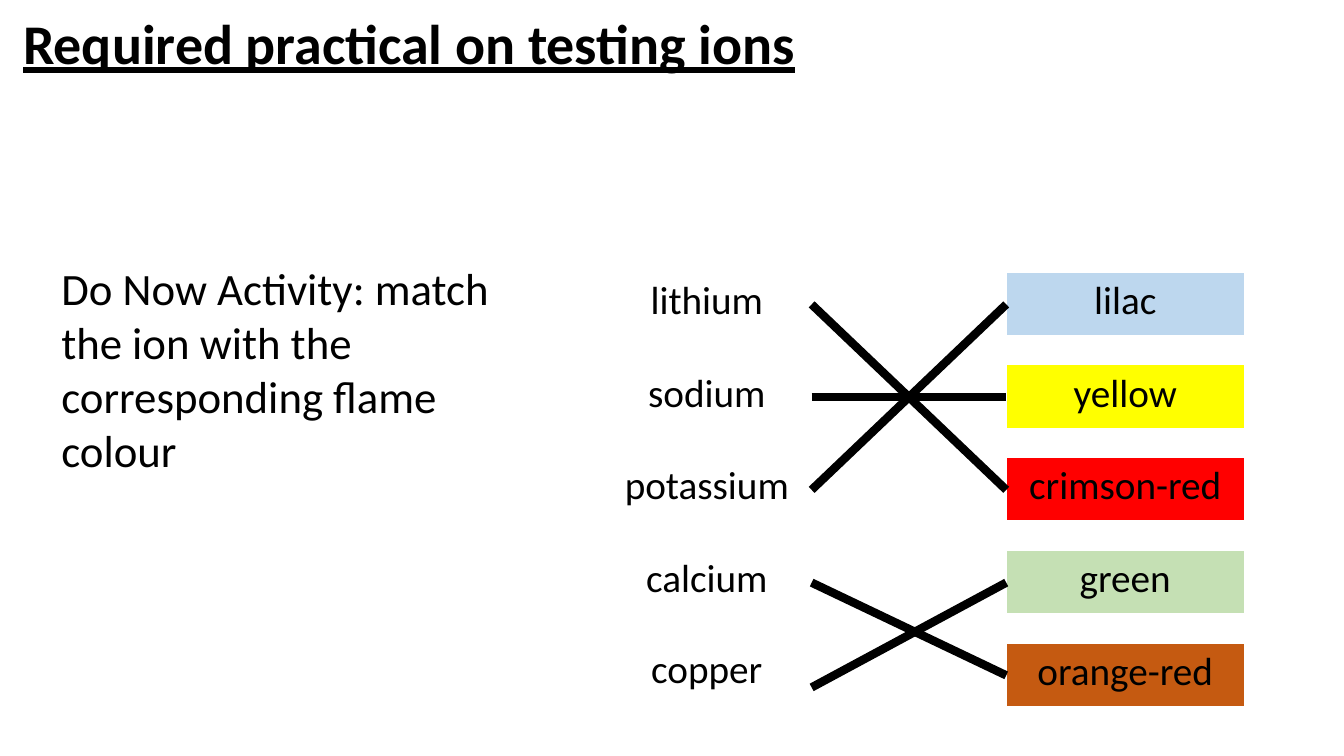
import pptx
import pptx.dml.color
import pptx.enum.shapes
import pptx.enum.text
import pptx.oxml.ns
import pptx.util
from lxml import etree
from pptx.util import Inches

COLOURS = {
    "black": "000000",
    "white": "FFFFFF",
    "lilac": "BDD7EE",
    "yellow": "FFFF00",
    "crimson-red": "FF0000",
    "green": "C5E0B4",
    "orange-red": "C55A11",
}
FLAMES = ["lilac", "yellow", "crimson-red", "green", "orange-red"]
MATCHES = {
    "lithium": "crimson-red",
    "sodium": "yellow",
    "potassium": "lilac",
    "calcium": "orange-red",
    "copper": "green",
}
CARD_TOP, CARD_HEIGHT, CARD_PITCH = 2.7, 0.64, 0.92
ION_LEFT, ION_WIDTH = 5.97, 2.08
FLAME_LEFT, FLAME_WIDTH = 9.98, 2.36
CARD_NUDGE = {"copper": -0.02}
LINE_NUDGE = {"copper": 0.12}


def colour(name):
    """Return the named colour."""
    return pptx.dml.color.RGBColor.from_string(COLOURS[name])


def place(shape, left, top, width, height):
    """Move and size a shape, given inches."""
    shape.left, shape.top = Inches(left), Inches(top)
    shape.width, shape.height = Inches(width), Inches(height)


def write(frame, text, size, bold=False, underline=False):
    """Set the text of a frame and format it."""
    frame.text = text
    frame.word_wrap = True
    span = frame.paragraphs[0].runs[0]
    span.font.name = "Calibri"
    span.font.size = pptx.util.Pt(size)
    span.font.bold = bold
    span.font.underline = underline
    span.font.color.rgb = colour("black")


def add_title(page, text):
    """Fill the title placeholder."""
    title = page.shapes.title
    place(title, 0.13, 0.11, 12.89, 2.07)
    write(title.text_frame, text, 40, bold=True, underline=True)
    title.text_frame.vertical_anchor = pptx.enum.text.MSO_ANCHOR.TOP
    para = title.text_frame.paragraphs[0]
    para.alignment = pptx.enum.text.PP_ALIGN.LEFT
    para.line_spacing = 0.9


def add_instruction(page, text):
    """Add the activity instruction."""
    box = page.shapes.add_textbox(Inches(0.51), Inches(2.54), Inches(4.68), Inches(2.26))
    write(box.text_frame, text, 32)


def add_borders(cell):
    """Give a cell white borders, thicker at the bottom."""
    properties = cell._tc.get_or_add_tcPr()
    for side, points in (("L", 1), ("R", 1), ("T", 1), ("B", 3)):
        line = etree.SubElement(properties, pptx.oxml.ns.qn(f"a:ln{side}"), w=str(pptx.util.Pt(points)))
        fill = etree.SubElement(line, pptx.oxml.ns.qn("a:solidFill"))
        etree.SubElement(fill, pptx.oxml.ns.qn("a:srgbClr"), val=COLOURS["white"])


def add_card(page, text, left, top, width, fill):
    """Add a one-cell table holding a word."""
    table = page.shapes.add_table(
        1, 1, Inches(left), Inches(top), Inches(width), Inches(CARD_HEIGHT)
    ).table
    table.first_row = table.horz_banding = False
    cell = table.cell(0, 0)
    write(cell.text_frame, text, 28)
    cell.text_frame.paragraphs[0].alignment = pptx.enum.text.PP_ALIGN.CENTER
    add_borders(cell)
    cell.fill.solid()
    cell.fill.fore_color.rgb = colour(fill)


def add_match(page, start, end):
    """Draw a thick line from an ion to its flame colour."""
    line = page.shapes.add_connector(
        pptx.enum.shapes.MSO_CONNECTOR.STRAIGHT,
        Inches(ION_LEFT + ION_WIDTH), Inches(start), Inches(FLAME_LEFT), Inches(end),
    )
    line.line.color.rgb = colour("black")
    line.line.width = pptx.util.Pt(6)
    etree.SubElement(line._element.spPr, pptx.oxml.ns.qn("a:effectLst"))


def main():
    """Build the slide and save it."""
    deck = pptx.Presentation()
    deck.slide_width, deck.slide_height = Inches(13.33), Inches(7.5)
    page = deck.slides.add_slide(deck.slide_layouts[5])
    add_title(page, "Required practical on testing ions")

    tops = [CARD_TOP + row * CARD_PITCH for row in range(len(FLAMES))]
    for ion, top in zip(MATCHES, tops):
        add_card(page, ion, ION_LEFT, top + CARD_NUDGE.get(ion, 0), ION_WIDTH, "white")
    for flame, top in zip(FLAMES, tops):
        add_card(page, flame, FLAME_LEFT, top, FLAME_WIDTH, flame)

    add_instruction(page, "Do Now Activity: match the ion with the corresponding flame colour")

    for (ion, flame), top in zip(MATCHES.items(), tops):
        start = top + CARD_HEIGHT / 2 + LINE_NUDGE.get(ion, 0)
        add_match(page, start, tops[FLAMES.index(flame)] + CARD_HEIGHT / 2)

    deck.save("out.pptx")


if __name__ == "__main__":
    main()
